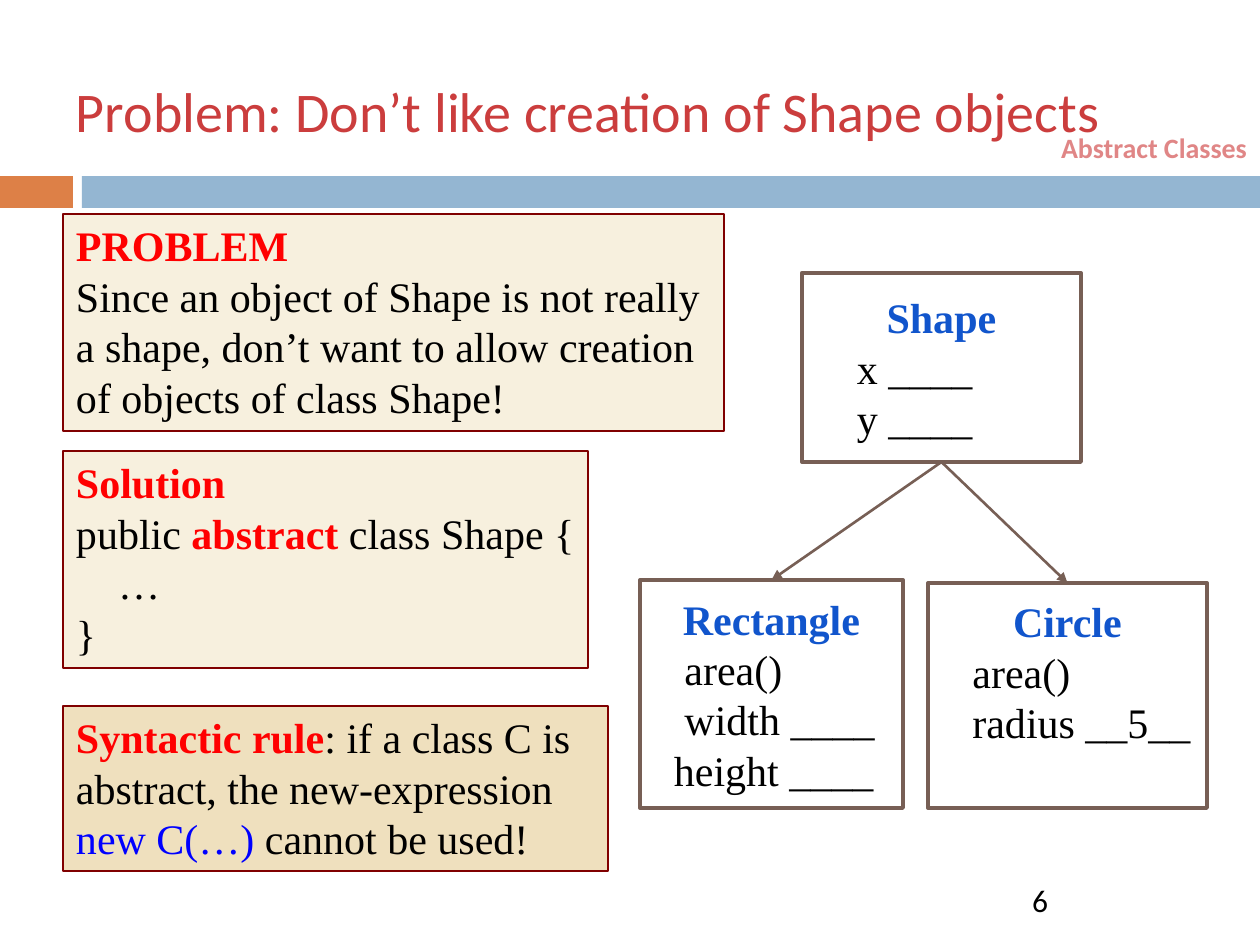
from pptx import Presentation
from pptx.dml.color import RGBColor
from pptx.enum.shapes import MSO_CONNECTOR, MSO_SHAPE
from pptx.enum.text import MSO_ANCHOR, MSO_AUTO_SIZE, PP_ALIGN
from pptx.oxml.ns import qn
from pptx.util import Emu, Pt
from lxml.etree import SubElement

SCALE = 9144000 / 1260
ORANGE = RGBColor(0xDD, 0x80, 0x47)
BLUE_BAR = RGBColor(0x94, 0xB6, 0xD2)
TITLE_RED = RGBColor(0xCB, 0x3D, 0x3D)
TOPIC_PINK = RGBColor(0xE0, 0x86, 0x86)
BROWN = RGBColor(0x77, 0x5F, 0x55)
CLASS_BLUE = RGBColor(0x11, 0x55, 0xCC)
CREAM = RGBColor(0xF7, 0xF0, 0xDE)
SAND = RGBColor(0xEF, 0xE0, 0xBE)
MAROON = RGBColor(0x80, 0x00, 0x00)
RED = RGBColor(0xFF, 0x00, 0x00)
BLUE = RGBColor(0x00, 0x00, 0xFF)
BLACK = RGBColor(0x00, 0x00, 0x00)
SANS, SERIF = "Calibri", "Times New Roman"
INSET = 13
SPACE = 10.5


def px(n):
    return Emu(round(n * SCALE))


def box(x, y, w, h):
    return px(x), px(y), px(w), px(h)


def format_run(r, size, font, color, bold=False):
    r.font.size = Pt(size)
    r.font.name = font
    r.font.color.rgb = color
    r.font.bold = bold


def set_insets(tf, side, end):
    tf.margin_left = tf.margin_right = px(side)
    tf.margin_top = tf.margin_bottom = px(end)


def add_rect(s, place, fill=None, line=None, width=0.75):
    sp = s.shapes.add_shape(MSO_SHAPE.RECTANGLE, *box(*place))
    sp.shadow.inherit = False
    if fill is None:
        sp.fill.background()
    else:
        sp.fill.solid()
        sp.fill.fore_color.rgb = fill
    if line is None:
        sp.line.fill.background()
    else:
        sp.line.color.rgb = line
        sp.line.width = Pt(width)
    return sp


def add_lines(tf, lines):
    for i, (align, indent, runs) in enumerate(lines):
        p = tf.paragraphs[0] if i == 0 else tf.add_paragraph()
        p.alignment = align
        if indent:
            p._p.get_or_add_pPr().set("marL", str(px(indent * SPACE)))
        for text, color, bold in runs:
            r = p.add_run()
            r.text = text
            format_run(r, 24, SERIF, color, bold)


def add_class(s, place, name, members, anchor=MSO_ANCHOR.MIDDLE):
    sp = add_rect(s, place, line=BROWN, width=2.25)
    tf = sp.text_frame
    set_insets(tf, INSET, INSET)
    tf.vertical_anchor = anchor
    heading = (PP_ALIGN.CENTER, 0, [(name, CLASS_BLUE, True)])
    add_lines(tf, [heading] + [(PP_ALIGN.LEFT, indent, [(text, BLACK, False)])
                               for indent, text in members])
    return sp


def add_note(s, place, fill, lines):
    tf = add_rect(s, place, fill, MAROON).text_frame
    set_insets(tf, INSET, 6)
    tf.vertical_anchor = MSO_ANCHOR.TOP
    add_lines(tf, [(PP_ALIGN.LEFT, indent, runs) for indent, runs in lines])


def add_arrow(s, parent, child):
    c = s.shapes.add_connector(MSO_CONNECTOR.STRAIGHT, 0, 0, 0, 0)
    c.begin_connect(parent, 2)
    c.end_connect(child, 0)
    c.line.color.rgb = BROWN
    c.line.width = Pt(1.5)
    SubElement(c.line._get_or_add_ln(), qn("a:tailEnd"), type="triangle")
    SubElement(c._element.spPr, qn("a:effectLst"))


def add_label(s, place, text, size, color, bold, align, end, wrap):
    tf = s.shapes.add_textbox(*box(*place)).text_frame
    tf.word_wrap = wrap
    set_insets(tf, INSET, end)
    tf.text = text
    p = tf.paragraphs[0]
    p.alignment = align
    format_run(p.runs[0], size, SANS, color, bold)


def set_title(s, text):
    sp = s.shapes.title
    sp.left, sp.top, sp.width, sp.height = box(63, 38, 1134, 119)
    tf = sp.text_frame
    tf.text = text
    tf.auto_size = MSO_AUTO_SIZE.NONE
    tf.vertical_anchor = MSO_ANCHOR.BOTTOM
    set_insets(tf, INSET, INSET)
    p = tf.paragraphs[0]
    p.alignment = PP_ALIGN.LEFT
    format_run(p.runs[0], 32, SANS, TITLE_RED)


def main():
    prs = Presentation()
    prs.slide_width, prs.slide_height = px(1260), px(945)
    s = prs.slides.add_slide(prs.slide_layouts[5])

    add_rect(s, (0, 176, 73, 32), ORANGE)
    add_rect(s, (82, 176, 1178, 32), BLUE_BAR)
    set_title(s, "Problem: Don’t like creation of Shape objects")
    add_label(s, (965, 118, 295, 50), "Abstract Classes", 16, TOPIC_PINK,
              True, PP_ALIGN.RIGHT, INSET, True)

    shape = add_class(s, (802, 273, 279, 189), "Shape",
                      [(4, "x ____"), (4, "y ____")])
    circle = add_class(s, (928, 583, 279, 225), "Circle",
                       [(3, "area()"), (3, "radius __5__")], MSO_ANCHOR.TOP)
    rectangle = add_class(s, (640, 580, 263, 228), "Rectangle",
                          [(3, "area()"), (3, "width ____"), (2, "height ____")])
    for child in (rectangle, circle):
        add_arrow(s, shape, child)

    add_note(s, (63, 214, 661, 217), CREAM, [
        (0, [("PROBLEM", RED, True)]),
        (0, [("Since an object of Shape is not really a shape, don’t want to "
              "allow creation of objects of class Shape!", BLACK, False)]),
    ])
    add_note(s, (63, 706, 545, 165), SAND, [
        (0, [("Syntactic rule", RED, True),
             (": if a class C is abstract, the new-expression ", BLACK, False),
             ("new C(…) ", BLUE, False),
             ("cannot be used!", BLACK, False)]),
    ])
    add_note(s, (63, 451, 525, 217), CREAM, [
        (0, [("Solution", RED, True)]),
        (0, [("public ", BLACK, False), ("abstract ", RED, True),
             ("class Shape {", BLACK, False)]),
        (4, [("…", BLACK, False)]),
        (0, [("}", BLACK, False)]),
    ])
    add_label(s, (1019, 875, 43, 50), "6", 18, BLACK, False,
              PP_ALIGN.LEFT, 6, False)
    prs.save("out.pptx")


if __name__ == "__main__":
    main()
